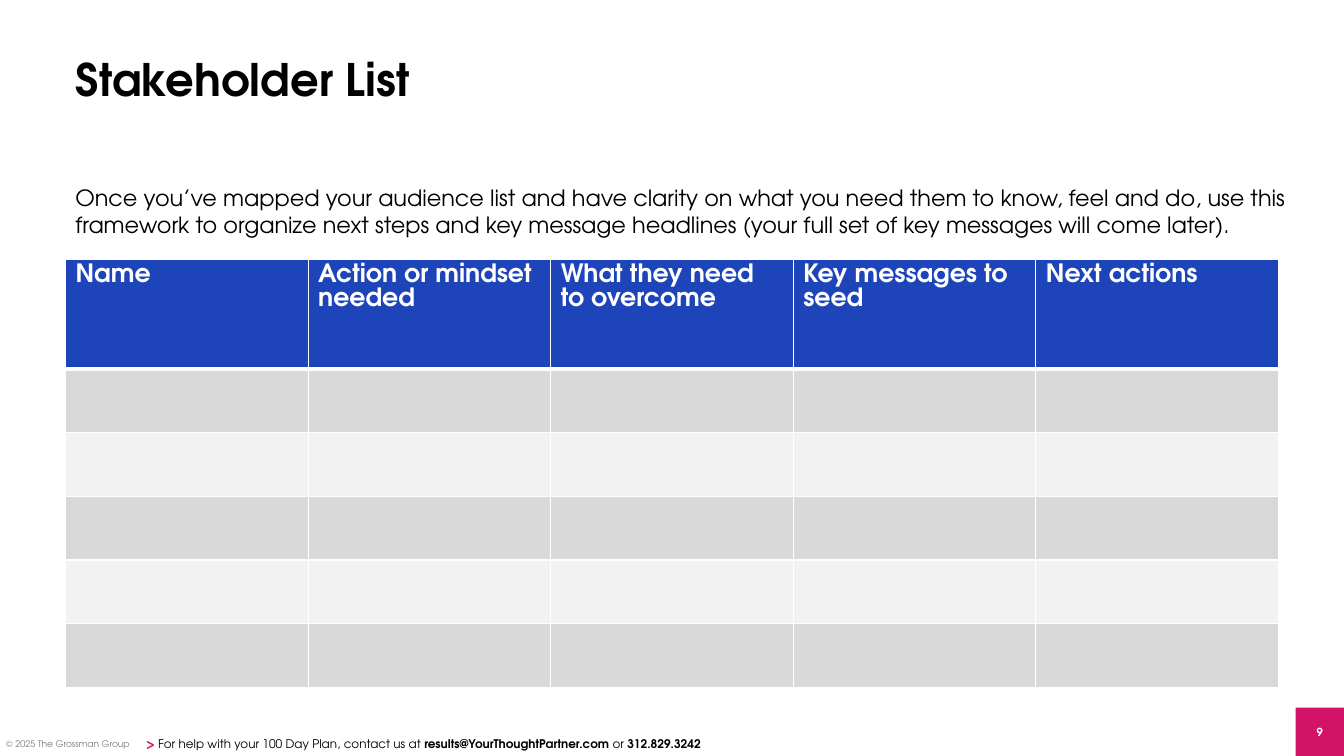
from dataclasses import dataclass

import pptx
import pptx.dml.color
import pptx.enum.shapes
import pptx.enum.text
import pptx.oxml
import pptx.oxml.ns
import pptx.util
from pptx.util import Inches

FONT = "TeX Gyre Adventor"
BLACK, WHITE, GREY = "000000", "FFFFFF", "808080"
BLUE, PINK = "1D45B9", "D31367"
BANDS = ("D9D9D9", "F2F2F2")
HEADINGS = (
    "Name",
    "Action or mindset needed",
    "What they need to overcome",
    "Key messages to seed",
    "Next actions",
)
BODY_ROWS = 5
TABLE_WIDTH, TABLE_HEIGHT, HEADER_HEIGHT = 12.03, 4.25, 1.09
COLUMN_WIDTH = TABLE_WIDTH / len(HEADINGS)
ROW_HEIGHT = (TABLE_HEIGHT - HEADER_HEIGHT) / BODY_ROWS
MIDDLE = pptx.enum.text.MSO_ANCHOR.MIDDLE
BOTTOM = pptx.enum.text.MSO_ANCHOR.BOTTOM


@dataclass(frozen=True)
class Span:
    text: str
    size: float
    color: str = BLACK
    bold: bool = False


@dataclass(frozen=True)
class TextBox:
    left: float
    top: float
    width: float
    height: float
    spans: tuple[Span, ...]
    anchor: pptx.enum.text.MSO_ANCHOR = pptx.enum.text.MSO_ANCHOR.TOP
    inset: bool = True


TEXT_BOXES = (
    TextBox(0.06, 7.33, 1.28, 0.11,
            (Span("© 2025 The Grossman Group", 6.5, GREY),), inset=False),
    TextBox(1.35, 7.26, 6.29, 0.24, (
        Span("> ", 8.5, PINK, True),
        Span("For help with your 100 Day Plan, contact us at ", 8.5),
        Span("results@YourThoughtPartner.com ", 8.5, bold=True),
        Span("or ", 8.5),
        Span("312.829.3242", 8.5, bold=True),
    ), BOTTOM),
    TextBox(0.65, 1.78, 12.29, 0.64, (Span(
        "Once you’ve mapped your audience list and have clarity on what you "
        "need them to know, feel and do, use this framework to organize next "
        "steps and key message headlines (your full set of key messages will "
        "come later).", 16),)),
)


def rgb(color: str) -> pptx.dml.color.RGBColor:
    return pptx.dml.color.RGBColor.from_string(color)


def add_spans(para, *spans: Span) -> None:
    for span in spans:
        run = para.add_run()
        run.text = span.text
        run.font.name = FONT
        run.font.size = pptx.util.Pt(span.size)
        run.font.bold = span.bold
        run.font.color.rgb = rgb(span.color)


def add_title(slide) -> None:
    title = slide.shapes.title
    title.left, title.top = Inches(0.65), Inches(0.09)
    title.width, title.height = Inches(11.23), Inches(1.45)
    title.text_frame.vertical_anchor = MIDDLE
    para = title.text_frame.paragraphs[0]
    para.alignment = pptx.enum.text.PP_ALIGN.LEFT
    para.line_spacing = 0.9
    add_spans(para, Span("Stakeholder List", 32, bold=True))


def add_text_box(slide, item: TextBox) -> None:
    box = slide.shapes.add_textbox(
        Inches(item.left), Inches(item.top), Inches(item.width), Inches(item.height))
    frame = box.text_frame
    frame.word_wrap = item.inset
    frame.vertical_anchor = item.anchor
    if not item.inset:
        frame.margin_left = frame.margin_right = 0
        frame.margin_top = frame.margin_bottom = 0
    add_spans(frame.paragraphs[0], *item.spans)


def style_cell(cell, fill: str, bottom: float) -> None:
    """Fill a cell and draw its white borders, the bottom one in points."""
    properties = cell._tc.get_or_add_tcPr()
    for side, width in (("L", 1), ("R", 1), ("T", 1), ("B", bottom)):
        properties.append(pptx.oxml.parse_xml(
            f'<a:ln{side} {pptx.oxml.ns.nsdecls("a")} w="{pptx.util.Pt(width)}">'
            f'<a:solidFill><a:srgbClr val="{WHITE}"/></a:solidFill></a:ln{side}>'))
    cell.fill.solid()
    cell.fill.fore_color.rgb = rgb(fill)


def add_stakeholder_table(slide) -> None:
    table = slide.shapes.add_table(
        BODY_ROWS + 1, len(HEADINGS), Inches(0.65), Inches(2.57),
        Inches(TABLE_WIDTH), Inches(TABLE_HEIGHT)).table
    for column in table.columns:
        column.width = Inches(COLUMN_WIDTH)
    for index, row in enumerate(table.rows):
        row.height = Inches(ROW_HEIGHT if index else HEADER_HEIGHT)
        fill = BANDS[(index - 1) % 2] if index else BLUE
        for cell in row.cells:
            style_cell(cell, fill, 1 if index else 3)
    for column, heading in enumerate(HEADINGS):
        para = table.cell(0, column).text_frame.paragraphs[0]
        add_spans(para, Span(heading, 18, WHITE, True))


def add_page_number(slide) -> None:
    box = slide.shapes.add_shape(
        pptx.enum.shapes.MSO_SHAPE.RECTANGLE,
        Inches(12.85), Inches(7.02), Inches(0.48), Inches(0.48))
    box.shadow.inherit = False
    box.fill.solid()
    box.fill.fore_color.rgb = rgb(PINK)
    box.line.fill.background()
    frame = box.text_frame
    frame.margin_left = frame.margin_right = 0
    frame.vertical_anchor = MIDDLE
    para = frame.paragraphs[0]
    para.alignment = pptx.enum.text.PP_ALIGN.CENTER
    add_spans(para, Span("9", 8, WHITE, True))


def main() -> None:
    deck = pptx.Presentation()
    deck.slide_width, deck.slide_height = Inches(13.33), Inches(7.5)
    slide = deck.slides.add_slide(deck.slide_layouts.get_by_name("Title Only"))
    add_title(slide)
    add_stakeholder_table(slide)
    add_page_number(slide)
    for item in TEXT_BOXES:
        add_text_box(slide, item)
    deck.save("out.pptx")


if __name__ == "__main__":
    main()
